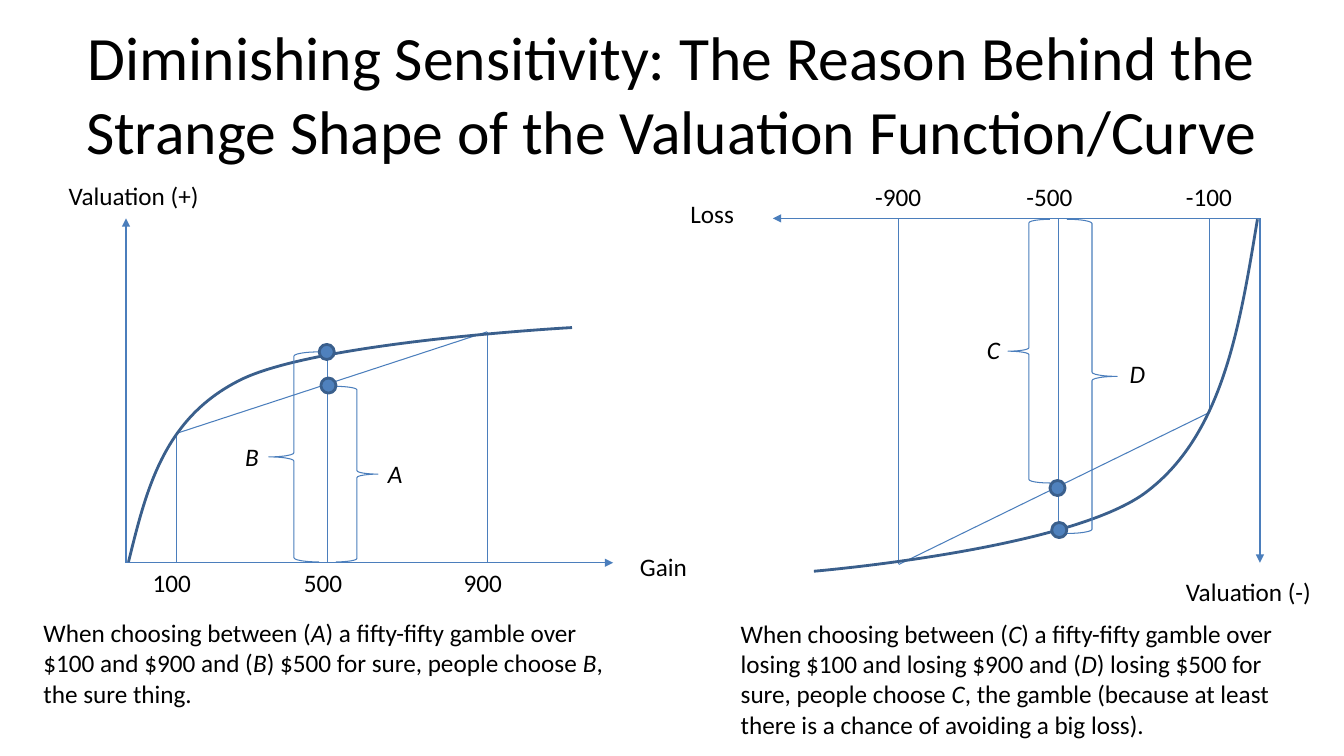
from lxml.etree import SubElement
from pptx import Presentation
from pptx.dml.color import RGBColor
from pptx.enum.shapes import MSO_CONNECTOR as Connector, MSO_SHAPE as Preset
from pptx.enum.text import MSO_ANCHOR as Anchor, MSO_AUTO_SIZE as AutoSize, PP_ALIGN as Align
from pptx.oxml.ns import qn
from pptx.util import Inches, Pt


class Board:
    """Draws on one slide laid out as 160 columns by 90 rows."""

    FONT, INK = "Calibri", "000000"
    THIN, BOLD, DOT = "4B7EBC", "3A5F8C", "4F81BD"

    def __init__(self, deck):
        self.column, self.row = deck.slide_width / 160, deck.slide_height / 90
        self.slide = deck.slides.add_slide(deck.slide_layouts[5])
        self.shapes = self.slide.shapes

    def color(self, code):
        return RGBColor.from_string(code)

    def place(self, x, y):
        return round(x * self.column), round(y * self.row)

    def box(self, x, y, width, height):
        return *self.place(x, y), *self.place(width, height)

    def style_run(self, run, size, italic=False):
        run.font.name, run.font.size = self.FONT, Pt(size)
        run.font.color.rgb, run.font.italic = self.color(self.INK), italic

    def outline(self, shape, code, width):
        shape.line.color.rgb, shape.line.width = self.color(code), Pt(width)

    def title(self, words, x, y, width, height):
        heading = self.shapes.title
        heading.left, heading.top, heading.width, heading.height = self.box(x, y, width, height)
        frame = heading.text_frame
        frame.text = words
        frame.auto_size, frame.vertical_anchor = AutoSize.NONE, Anchor.MIDDLE
        frame.paragraphs[0].alignment = Align.CENTER
        self.style_run(frame.paragraphs[0].runs[0], 44)

    def text(self, words, x, y, width=9, height=5):
        frame = self.shapes.add_textbox(*self.box(x, y, width, height)).text_frame
        frame.word_wrap, frame.auto_size = True, AutoSize.SHAPE_TO_FIT_TEXT
        for index, part in enumerate(words.split("*")):
            if part:
                run = frame.paragraphs[0].add_run()
                run.text = part
                self.style_run(run, 18, italic=index % 2 == 1)

    def line(self, start, end, arrow=False):
        stroke = self.shapes.add_connector(Connector.STRAIGHT, *self.place(*start), *self.place(*end))
        self.outline(stroke, self.THIN, 0.75)
        properties = stroke._element.spPr
        if arrow:
            SubElement(properties.find(qn("a:ln")), qn("a:tailEnd"), type="triangle")
        SubElement(properties, qn("a:effectLst"))

    def curve(self, *knots):
        start, *bends = [self.place(*knot) for knot in knots]
        builder = self.shapes.build_freeform(*start)
        builder.add_line_segments(bends, close=False)
        valuation = builder.convert_to_shape()
        outline = next(valuation._element.iter(qn("a:path")))
        segments = outline.findall(qn("a:lnTo"))
        for first in range(0, len(segments), 3):
            bend = SubElement(outline, qn("a:cubicBezTo"))
            for segment in segments[first:first + 3]:
                bend.append(segment[0])
                outline.remove(segment)
        valuation.shadow.inherit = False
        valuation.fill.background()
        self.outline(valuation, self.BOLD, 2)

    def brace(self, preset, x, y, width, height, rotation=0):
        bracket = self.shapes.add_shape(preset, *self.box(x, y, width, height))
        bracket.shadow.inherit = False
        bracket.rotation = rotation
        bracket.fill.background()
        self.outline(bracket, self.THIN, 0.75)

    def dot(self, x, y):
        marker = self.shapes.add_shape(Preset.OVAL, *self.box(x - 0.9, y - 0.9, 1.8, 1.8))
        marker.shadow.inherit = False
        marker.fill.solid()
        marker.fill.fore_color.rgb = self.color(self.DOT)
        self.outline(marker, self.BOLD, 2)

    def graph(self, origin, across, upright, drops, labels, label_row):
        for tip in (across, upright):
            self.line(origin, tip, arrow=True)
        for x, y in drops:
            self.line((x, origin[1]), (x, y))
        self.line(drops[0], drops[-1])
        for amount, x in labels.items():
            self.text(amount, x, label_row)


def main():
    deck = Presentation()
    deck.slide_width, deck.slide_height = Inches(40 / 3), Inches(7.5)
    board = Board(deck)
    board.title("Diminishing Sensitivity: The Reason Behind the Strange Shape of the "
                "Valuation Function/Curve", 8, 3.6, 144, 15)

    board.graph((15, 67), (73, 67), (15, 26), [(21, 51.6), (39, 41.9), (58, 39.5)],
                {"100": 17, "500": 35, "900": 54}, 67)
    board.curve((15.3, 66.9), (17.4, 58.4), (19.4, 50), (28.3, 45.4),
                (37.1, 40.7), (68.1, 39), (68.1, 39))
    board.brace(Preset.RIGHT_BRACE, 40, 46, 5, 20.9)
    board.brace(Preset.LEFT_BRACE, 32, 41.9, 6, 25)

    board.graph((150, 26), (92, 26), (150, 67), [(144, 49.1), (126, 63.6), (107, 67.2)],
                {"-900": 103, "-500": 121, "-100": 140}, 21)
    board.curve((149.7, 26.1), (147.6, 38.8), (145.6, 51.5), (136.7, 58.4),
                (127.9, 65.4), (96.9, 68), (96.9, 68))
    board.brace(Preset.RIGHT_BRACE, 120, 26.1, 5, 31.4, rotation=180)
    board.brace(Preset.LEFT_BRACE, 127, 26.1, 6, 37.4, rotation=180)

    for words, x, y in (("Gain", 75, 65), ("Loss", 81, 23)):
        board.text(words, x, y)
    for letter, x, y in (("*A*", 45, 54), ("*B*", 28, 52), ("*C*", 116.3, 39.2), ("*D*", 133.3, 42.1)):
        board.text(letter, x, y, 5.8, 4.8)
    board.text("Valuation (+)", 7, 20.9, 18, 4.8)
    board.text("Valuation (-)", 140, 68, 18, 4.8)
    board.text("When choosing between (*A*) a fifty-fifty gamble over $100 and $900 and (*B*) "
               "$500 for sure, people choose *B*, the sure thing.", 4, 72.9, 71, 12.1)
    board.text("When choosing between (*C*) a fifty-fifty gamble over losing $100 and losing $900 "
               "and (*D*) losing $500 for sure, people choose *C*, the gamble (because at least "
               "there is a chance of avoiding a big loss).", 87, 73, 71, 15.7)

    for x, y in ((125.9, 58.1), (39.1, 45.9), (38.9, 41.9), (126.1, 63.1)):
        board.dot(x, y)
    deck.save("out.pptx")


if __name__ == "__main__":
    main()
